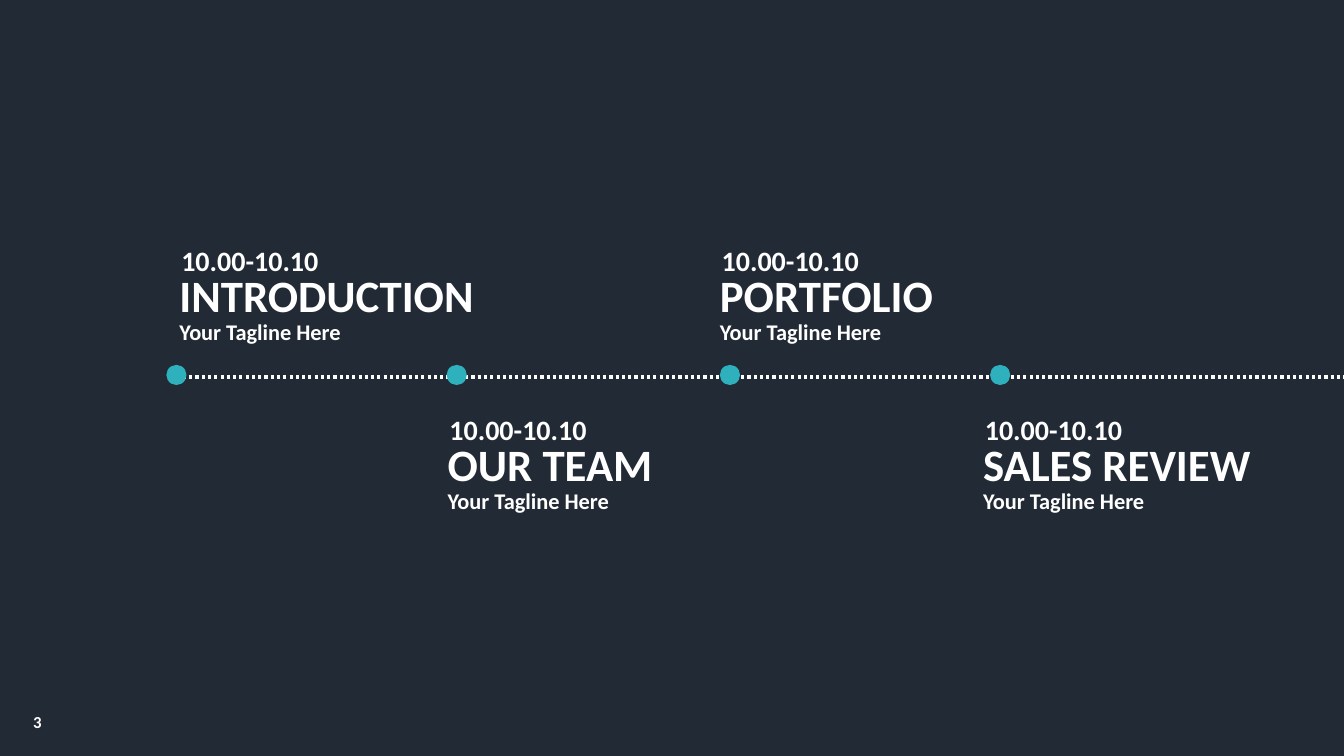
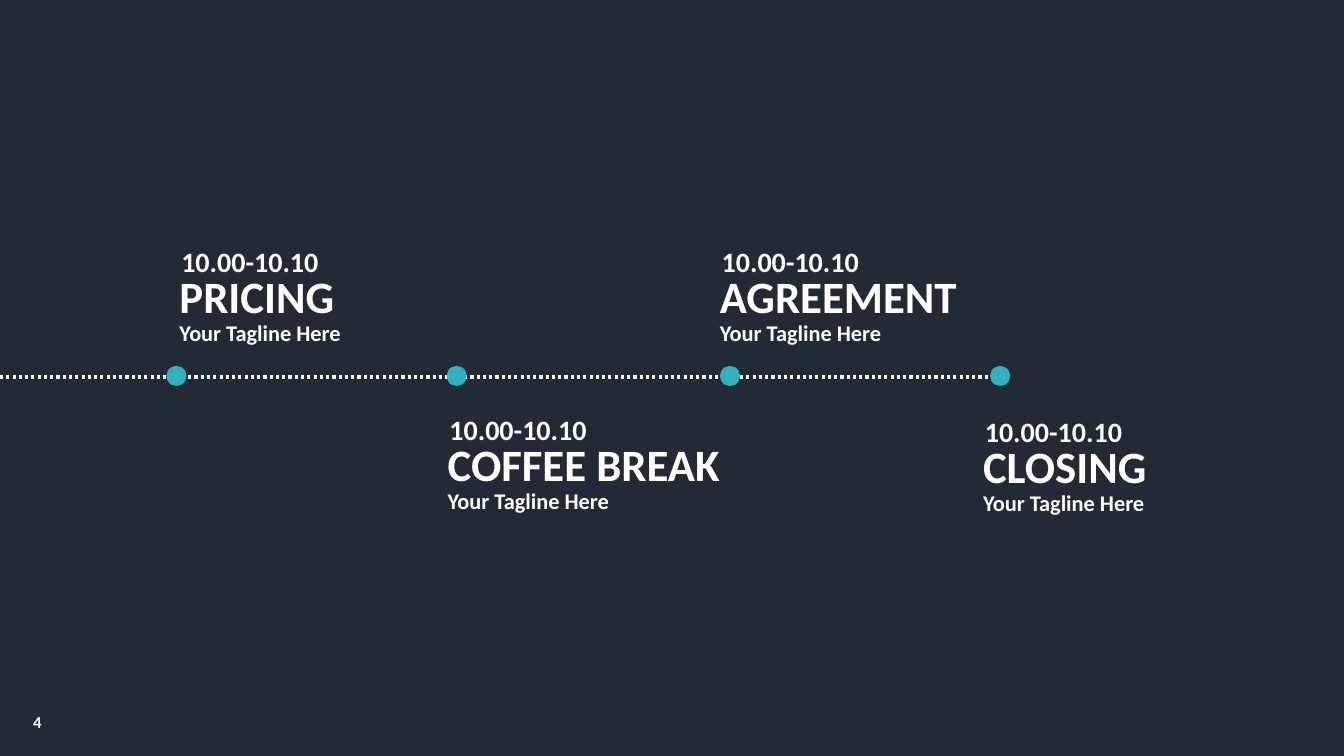
"""Build two agenda timeline slides."""
from lxml.etree import SubElement
from pptx import Presentation
from pptx.dml.color import RGBColor
from pptx.enum.dml import MSO_LINE
from pptx.enum.shapes import MSO_CONNECTOR, MSO_SHAPE
from pptx.enum.text import MSO_ANCHOR, MSO_AUTO_SIZE, PP_ALIGN
from pptx.oxml.ns import qn
from pptx.util import Emu, Pt

PX_PER_INCH = 100
SLIDE_WIDTH, SLIDE_HEIGHT = 1333, 750
FONT = "Calibri"
NAVY, WHITE, TEAL = "222A35", "FFFFFF", "2EB0BD"
TIME, TAGLINE = "10.00-10.10", "Your Tagline Here"
DOT_LEFTS = (165, 443, 714, 982)
DOT_SIZE = 20
SESSION_LEFTS = (178, 444, 714, 975)
LINE_Y = 374
AGENDA = (
    {"number": 3, "line": (169, SLIDE_WIDTH), "dot_top": 362,
     "names": ("INTRODUCTION", "OUR TEAM", "PORTFOLIO", "SALES REVIEW"),
     "tops": (237, 404, 237, 404)},
    {"number": 4, "line": (0, 994), "dot_top": 363,
     "names": ("PRICING", "COFFEE BREAK", "AGREEMENT", "CLOSING"),
     "tops": (238, 404, 238, 406)},
)


def px(length):
    """Turn px into EMU."""
    return Emu(length * 914400 // PX_PER_INCH)


def color(hex_code):
    """Turn a hex string into a colour."""
    return RGBColor.from_string(hex_code)


def add_text(shapes, text, box, size):
    """Add a bold white text box and return its frame."""
    frame = shapes.add_textbox(*map(px, box)).text_frame
    frame.text = text
    font = frame.paragraphs[0].runs[0].font
    font.name, font.size, font.bold = FONT, Pt(size), True
    font.color.rgb = color(WHITE)
    return frame


def add_label(shapes, text, box, size):
    """Add text that sizes its own box and does not wrap."""
    frame = add_text(shapes, text, box, size)
    frame.word_wrap = False
    frame.auto_size = MSO_AUTO_SIZE.SHAPE_TO_FIT_TEXT
    return frame.paragraphs[0]


def add_heading(shapes, text, box, size):
    """Add wrapped text, centred vertically and without insets."""
    frame = add_text(shapes, text, box, size)
    frame.word_wrap = True
    frame.vertical_anchor = MSO_ANCHOR.MIDDLE
    frame.margin_left = frame.margin_right = 0
    frame.margin_top = frame.margin_bottom = 0
    heading = frame.paragraphs[0]
    heading.space_before = Pt(10)
    return heading


def add_session(slide, left, top, name):
    """Add a grouped time, session name and tagline."""
    shapes = slide.shapes.add_group_shape().shapes
    tagline = add_heading(shapes, TAGLINE, (left, top + 66, 208, 39), 16)
    tagline.line_spacing = 1.5
    add_heading(shapes, name, (left, top + 27, 337, 57), 32)
    add_label(shapes, TIME, (left - 8, top, 156, 44), 20)


def add_timeline(slide, start, end):
    """Add the dotted horizontal line."""
    timeline = slide.shapes.add_connector(
        MSO_CONNECTOR.STRAIGHT, px(start), px(LINE_Y), px(end), px(LINE_Y))
    timeline.line.color.rgb = color(WHITE)
    timeline.line.width = Pt(2.25)
    timeline.line.dash_style = MSO_LINE.ROUND_DOT
    SubElement(timeline._element.spPr, qn("a:effectLst"))


def add_dot(slide, left, top):
    """Add a round marker on the timeline."""
    dot = slide.shapes.add_shape(
        MSO_SHAPE.OVAL, px(left), px(top), px(DOT_SIZE), px(DOT_SIZE))
    dot.shadow.inherit = False
    dot.fill.solid()
    dot.fill.fore_color.rgb = color(TEAL)
    dot.line.fill.background()


def add_agenda_slide(prs, number, line, dot_top, names, tops):
    """Add one slide of the agenda."""
    slide = prs.slides.add_slide(prs.slide_layouts.get_by_name("Blank"))
    page_number = add_label(slide.shapes, str(number), (17, 701, 40, 30), 12)
    page_number.alignment = PP_ALIGN.CENTER
    add_timeline(slide, *line)
    for left in DOT_LEFTS:
        add_dot(slide, left, dot_top)
    for left, top, name in zip(SESSION_LEFTS, tops, names):
        add_session(slide, left, top, name)


def main():
    """Build and save the presentation."""
    prs = Presentation()
    prs.slide_width, prs.slide_height = px(SLIDE_WIDTH), px(SLIDE_HEIGHT)
    backdrop = prs.slide_master.background.fill
    backdrop.solid()
    backdrop.fore_color.rgb = color(NAVY)
    for page in AGENDA:
        add_agenda_slide(prs, **page)
    prs.save("out.pptx")


if __name__ == "__main__":
    main()
